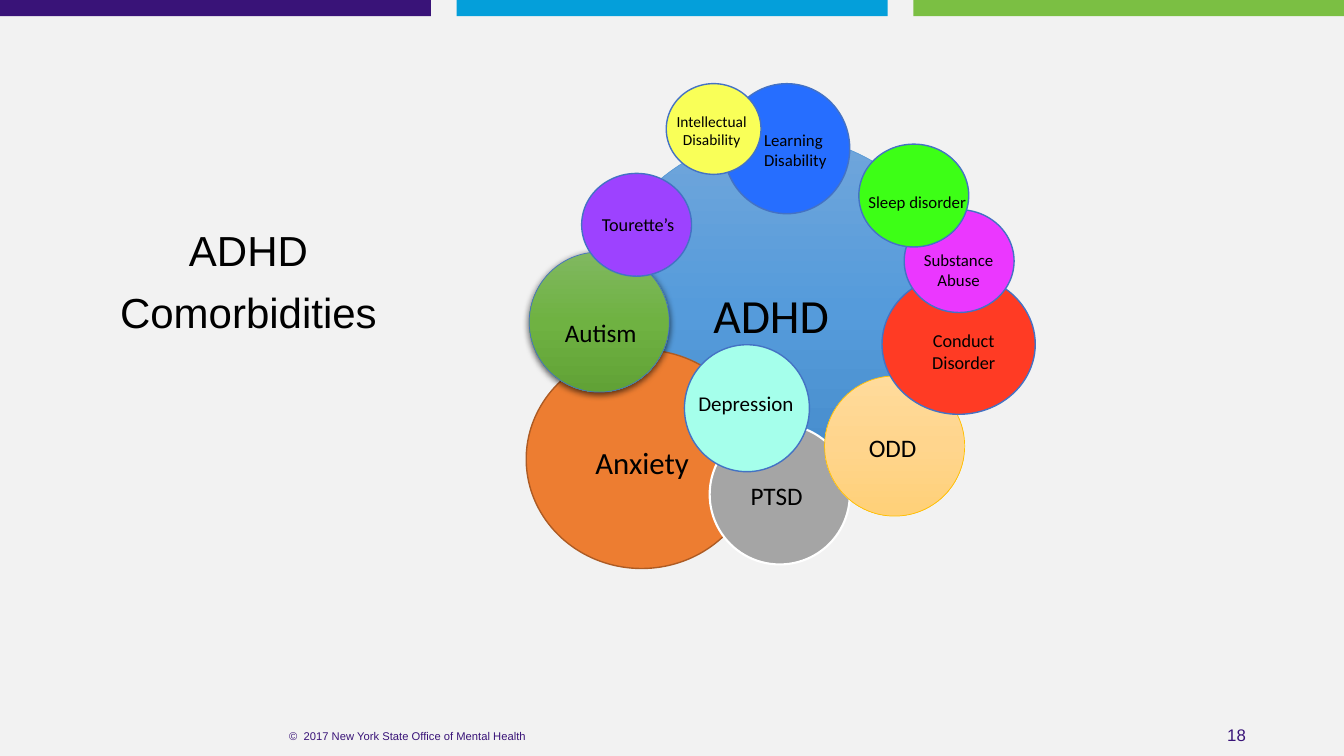
from copy import deepcopy

from lxml import etree
from pptx import Presentation
from pptx.dml.color import RGBColor
from pptx.enum.shapes import MSO_SHAPE
from pptx.enum.text import MSO_ANCHOR, MSO_AUTO_SIZE, PP_ALIGN
from pptx.oxml.ns import qn
from pptx.util import Inches, Pt

RECTANGLE, OVAL = MSO_SHAPE.RECTANGLE, MSO_SHAPE.OVAL
LEFT, CENTER, RIGHT = PP_ALIGN.LEFT, PP_ALIGN.CENTER, PP_ALIGN.RIGHT
TOP, MIDDLE = MSO_ANCHOR.TOP, MSO_ANCHOR.MIDDLE
NO_AUTOFIT = MSO_AUTO_SIZE.NONE

# Grid: square cells of a tenth of an inch
COLUMNS, ROWS = 133.33, 75
CELL = Inches(0.1)
INSET = 0.5

BLACK, PURPLE, EDGE = "000000", "391378", "4472C4"
BACKGROUND = "F2F2F2"
BAR_COLORS = [PURPLE, "049FDA", "7BBF43"]
BAR_STEP, BAR_WIDTH, BAR_HEIGHT = 45.3, 42.75, 1.6

# Bubbles from back to front: circle area, fill (one colour or three gradient
# stops), edge colour and width, then label lines, size, left, top and width
BUBBLES = [
    ((59.4, 13.5, 35.8, 34.7), ["70A6DB", "559BDB", "448AC9"], "5B9BD5", 0.5,
     ["ADHD"], 34, (70.2, 27.9, 12.6), CENTER),
    ((52.2, 34.7, 22.9, 21.7), ["ED7D31"], "AD5B24", 1,
     ["Anxiety"], 22, (58.5, 43.5, 10.4), CENTER),
    ((70.4, 42.1, 13.9, 13.9), ["A5A5A5"], "FFFFFF", 1.5,
     ["PTSD"], 18, (73.9, 47.2, 6.3), CENTER),
    ((81.8, 37.3, 13.9, 13.9), ["FFDB9B", "FFD58D", "FFD078"], "FFC000", 0.5,
     ["ODD"], 18, (85.6, 42.4, 5.9), CENTER),
    ((52.5, 25, 13.9, 13.9), ["80B860", "6FB242", "61A236"], EDGE, 0.5,
     ["Autism"], 18, (55.6, 31, 8), CENTER),
    ((87.5, 27.2, 15.2, 13.9), ["FF3B24"], EDGE, 1,
     ["Conduct", "Disorder"], 13, (91.7, 32.2, 7.8), CENTER),
    ((67.9, 34.2, 12.4, 12.6), ["A5FFEB"], EDGE, 1,
     ["Depression"], 15, (68.7, 38.2, 10.6), CENTER),
    ((89.7, 20.8, 10.9, 10.2), ["EB37FF"], EDGE, 1,
     ["Substance", "Abuse"], 12, (91, 24.3, 8.2), CENTER),
    ((57.7, 17.2, 10.9, 10.2), ["9D42FF"], EDGE, 1,
     ["Tourette’s"], 13, (59.1, 20.7, 8.4), CENTER),
    ((85.2, 14.3, 10.9, 10.2), ["3DFF16"], EDGE, 1,
     ["Sleep disorder"], 12, (85.6, 18.5, 10.8), CENTER),
    ((71.8, 8.3, 12.5, 12.9), ["266EFF"], EDGE, 1,
     ["Learning", "Disability"], 12, (75.3, 12.4, 7.2), LEFT),
    ((66.1, 8.3, 9.4, 9), ["F9FF58"], EDGE, 1,
     ["Intellectual", "Disability"], 11, (66.4, 10.6, 8.4), CENTER),
]


def cells(*counts):
    return [round(count * CELL) for count in counts]


def color(hex_code):
    return RGBColor.from_string(hex_code)


def fill_shape(shape, colors):
    """Fill with one colour, or with a gradient running downwards."""
    if len(colors) == 1:
        shape.fill.solid()
        shape.fill.fore_color.rgb = color(colors[0])
        return
    shape.fill.gradient()
    shape.fill.gradient_angle = 270
    stop_list = next(shape._element.iter(qn("a:gsLst")))
    while len(stop_list) < len(colors):
        stop_list.append(deepcopy(stop_list[0]))
    for index, stop in enumerate(shape.fill.gradient_stops):
        stop.position = index / (len(colors) - 1)
        stop.color.rgb = color(colors[index])


def add_figure(slide, kind, area, colors, edge=None, edge_width=1):
    shape = slide.shapes.add_shape(kind, *cells(*area))
    shape.shadow.inherit = False
    fill_shape(shape, colors)
    if edge:
        shape.line.color.rgb = color(edge)
        shape.line.width = Pt(edge_width)
    else:
        shape.line.fill.background()
    return shape


def add_drop_shadow(shape):
    effects = shape._element.spPr.find(qn("a:effectLst"))
    shadow = etree.SubElement(effects, qn("a:outerShdw"), blurRad=str(Pt(5)),
                              dist=str(Pt(1.5)), dir="5400000", rotWithShape="0")
    tone = etree.SubElement(shadow, qn("a:srgbClr"), val=BLACK)
    etree.SubElement(tone, qn("a:alpha"), val="63000")


def write_lines(frame, lines, size, font, hex_code, align, anchor=TOP, wrap=False):
    frame.word_wrap = wrap
    frame.auto_size = NO_AUTOFIT
    frame.vertical_anchor = anchor
    frame.margin_left = frame.margin_right = cells(INSET)[0]
    frame.margin_top = frame.margin_bottom = cells(INSET)[0]
    for index, line in enumerate(lines):
        paragraph = frame.add_paragraph() if index else frame.paragraphs[0]
        paragraph.alignment = align
        run = paragraph.add_run()
        run.text = line
        run.font.size = Pt(size)
        run.font.name = font
        run.font.color.rgb = color(hex_code)


def add_label(slide, area, *text_style):
    box = slide.shapes.add_textbox(*cells(*area))
    write_lines(box.text_frame, *text_style)


def add_bubble(slide, area, colors, edge, edge_width, lines, size, place, align):
    circle = add_figure(slide, OVAL, area, colors, edge, edge_width)
    height = len(lines) * size / 6 + 2 * INSET
    add_label(slide, (*place, height), lines, size, "Calibri", BLACK, align)
    return circle


def format_title(slide):
    title = slide.shapes.title
    title.left, title.top, title.width, title.height = cells(5.7, 22.3, 37.9, 41.7)
    write_lines(title.text_frame, ["ADHD", "Comorbidities"], 30, "Arial", BLACK,
                CENTER, wrap=True)
    for index, paragraph in enumerate(title.text_frame.paragraphs):
        paragraph.line_spacing = 0.9
        paragraph.space_before = Pt(12 if index else 0)


def main():
    presentation = Presentation()
    presentation.slide_width, presentation.slide_height = cells(COLUMNS, ROWS)
    slide = presentation.slides.add_slide(presentation.slide_layouts[5])
    slide.background.fill.solid()
    slide.background.fill.fore_color.rgb = color(BACKGROUND)

    # Bars along the top edge
    for index, bar_color in enumerate(BAR_COLORS):
        area = (index * BAR_STEP, 0, BAR_WIDTH, BAR_HEIGHT)
        add_figure(slide, RECTANGLE, area, [bar_color])

    format_title(slide)

    # Overlapping conditions
    for bubble in BUBBLES:
        circle = add_bubble(slide, *bubble)
        if "Autism" in bubble[4]:
            add_drop_shadow(circle)

    # Footer
    add_label(slide, (18.6, 71.8, 43.7, 2.4),
              ["©  2017 New York State Office of Mental Health"],
              8, "Arial", PURPLE, CENTER, MIDDLE)
    add_label(slide, (121.3, 71.6, 2.8, 2.7), ["18"],
              12, "Arial", PURPLE, RIGHT, MIDDLE)

    presentation.save("out.pptx")


if __name__ == "__main__":
    main()
